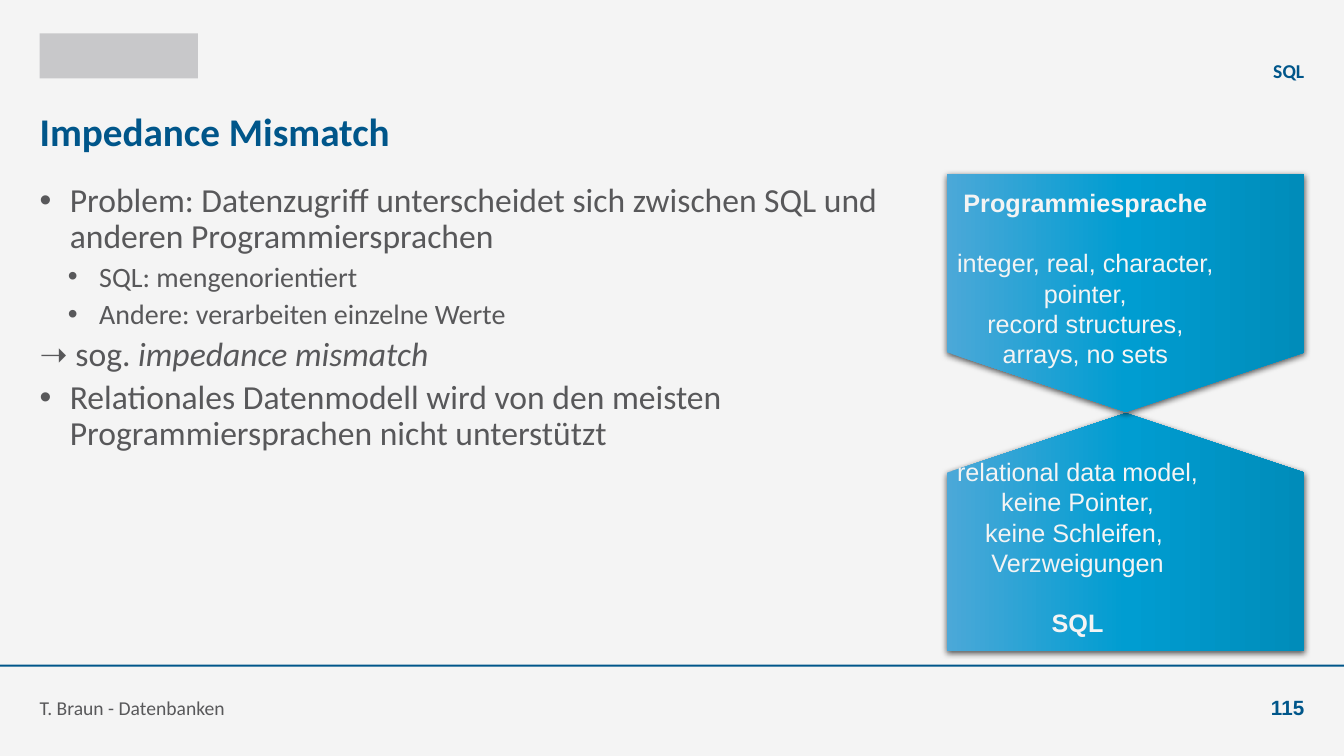
from dataclasses import dataclass

from lxml.etree import SubElement
from pptx import Presentation
from pptx.dml.color import RGBColor
from pptx.enum.shapes import MSO_SHAPE as Shape
from pptx.enum.text import MSO_ANCHOR as Anchor, PP_ALIGN as Align
from pptx.oxml import parse_xml
from pptx.oxml.ns import nsdecls, qn
from pptx.util import Cm, Pt


@dataclass(frozen=True)
class Theme:
    paper: str = "F4F4F4"
    ink: str = "58585A"
    accent: str = "00568A"
    emblem: str = "C8C8CA"
    gradient: tuple = ((0, "4BA8D8"), (50, "009DD1"), (100, "008CBA"))
    heading: float = 28
    body: tuple = (24, 20)
    plate: float = 18
    number: float = 14.7
    small: float = 14
    font: str = "Calibri"
    plate_font: str = "Arial"


class SlideBuilder:
    def __init__(self, slide, theme):
        self.slide = slide
        self.theme = theme
        fill = slide.background.fill
        fill.solid()
        fill.fore_color.rgb = RGBColor.from_string(theme.paper)

    def run(self, paragraph, words, size, color, bold=False, italic=False, font=None):
        run = paragraph.add_run()
        run.text = words
        run.font.size = Pt(size)
        run.font.name = font or self.theme.font
        run.font.bold = bold
        run.font.italic = italic
        run.font.color.rgb = RGBColor.from_string(color)

    def frame(self, box, anchor):
        frame = self.slide.shapes.add_textbox(*map(Cm, box)).text_frame
        frame.word_wrap = True
        frame.vertical_anchor = anchor
        frame.margin_left = frame.margin_right = Cm(0)
        frame.margin_top = frame.margin_bottom = Cm(0)
        return frame

    def label(self, box, words, size, color, align=Align.LEFT, anchor=Anchor.BOTTOM,
              bold=True, font=None):
        paragraph = self.frame(box, anchor).paragraphs[0]
        paragraph.alignment = align
        self.run(paragraph, words, size, color, bold, font=font)

    def block(self, box, color):
        block = self.slide.shapes.add_shape(Shape.RECTANGLE, *map(Cm, box))
        block.shadow.inherit = False
        block.fill.solid()
        block.fill.fore_color.rgb = RGBColor.from_string(color)
        block.line.fill.background()

    def outline(self, box, points):
        frame = self.frame(box, Anchor.TOP)
        for index, (level, bullet, parts) in enumerate(points):
            paragraph = frame.add_paragraph() if index else frame.paragraphs[0]
            paragraph.level = level
            paragraph.line_spacing = 0.9
            paragraph.space_before = Pt(5)
            margin, hanging = ((0.76, 0.76), (1.5, 0.79))[level]
            properties = paragraph._p.get_or_add_pPr()
            properties.set("marL", str(Cm(margin)))
            properties.set("indent", str(-Cm(hanging)))
            if bullet:
                SubElement(properties, qn("a:buFont")).set("typeface", "Arial")
                SubElement(properties, qn("a:buChar")).set("char", "•")
            for words, italic in parts:
                self.run(paragraph, words, self.theme.body[level], self.theme.ink,
                         italic=italic)

    def plate(self, top, rotation, tip, mirrored, paragraphs):
        plate = self.slide.shapes.add_shape(
            Shape.PENTAGON, Cm(25.37), Cm(top), Cm(6), Cm(9))
        plate.rotation = rotation
        plate.adjustments[0] = tip
        plate.line.fill.background()
        properties = plate._element.spPr
        if mirrored:
            properties.find(qn("a:xfrm")).set("flipV", "1")
        stops = "".join(
            f'<a:gs pos="{place * 1000}"><a:srgbClr val="{color}"/></a:gs>'
            for place, color in self.theme.gradient)
        properties.find(qn("a:prstGeom")).addnext(parse_xml(
            f'<a:gradFill {nsdecls("a")} rotWithShape="1"><a:gsLst>{stops}</a:gsLst>'
            '<a:lin ang="5400000" scaled="0"/></a:gradFill>'))
        properties.append(parse_xml(
            f'<a:effectLst {nsdecls("a")}><a:outerShdw blurRad="{Pt(4.5)}" '
            f'dist="{Pt(1.5)}" dir="5400000" rotWithShape="0"><a:srgbClr val="000000">'
            '<a:alpha val="63000"/></a:srgbClr></a:outerShdw></a:effectLst>'))
        frame = plate.text_frame
        frame.word_wrap = False
        frame.vertical_anchor = Anchor.MIDDLE
        frame._txBody.bodyPr.set("vert", "eaVert")
        for index, (lines, bold) in enumerate(paragraphs):
            paragraph = frame.add_paragraph() if index else frame.paragraphs[0]
            paragraph.alignment = Align.CENTER
            if index:
                paragraph.space_before = Pt(21.6)
            for number, words in enumerate(lines):
                if number:
                    paragraph.add_line_break()
                self.run(paragraph, words, self.theme.plate, self.theme.paper, bold,
                         font=self.theme.plate_font)


def main():
    deck = Presentation()
    deck.slide_width, deck.slide_height = Cm(33.87), Cm(19.05)
    theme = Theme()
    page = SlideBuilder(deck.slides.add_slide(deck.slide_layouts[6]), theme)

    page.block((1, 0.84, 3.99, 1.14), theme.emblem)
    page.block((0, 16.75, 33.87, 0.05), theme.accent)
    page.label((1, 2.51, 31.87, 1.6), "Impedance Mismatch", theme.heading,
               theme.accent, anchor=Anchor.MIDDLE)
    page.outline((1, 4.62, 22.56, 11.79), (
        (0, True, (("Problem: Datenzugriff unterscheidet sich zwischen SQL und "
                    "anderen Programmiersprachen", False),)),
        (1, True, (("SQL: mengenorientiert", False),)),
        (1, True, (("Andere: verarbeiten einzelne Werte", False),)),
        (0, False, (("➝ sog. ", False), ("impedance mismatch", True))),
        (0, True, (("Relationales Datenmodell wird von den meisten "
                    "Programmiersprachen nicht unterstützt", False),)),
    ))
    page.label((30.86, 17.15, 2.01, 0.99), "115", theme.number, theme.accent,
               Align.RIGHT, font=theme.plate_font)
    page.plate(8.91, 270, 0.25, False, (
        (("relational data model,", "keine Pointer,", "keine Schleifen, ",
          "Verzweigungen"), False),
        (("SQL",), True),
    ))
    page.plate(2.88, 90, 0.25, True, (
        (("Programmiesprache",), True),
        (("integer, real, character,", "pointer,", "record structures,",
          "arrays, no sets"), False),
    ))
    page.label((9.98, 1.09, 22.89, 0.99), "SQL", theme.small, theme.accent, Align.RIGHT)
    page.label((1, 17.15, 23.37, 0.99), "T. Braun - Datenbanken", theme.small,
               theme.ink, bold=False)
    deck.save("out.pptx")


if __name__ == "__main__":
    main()
